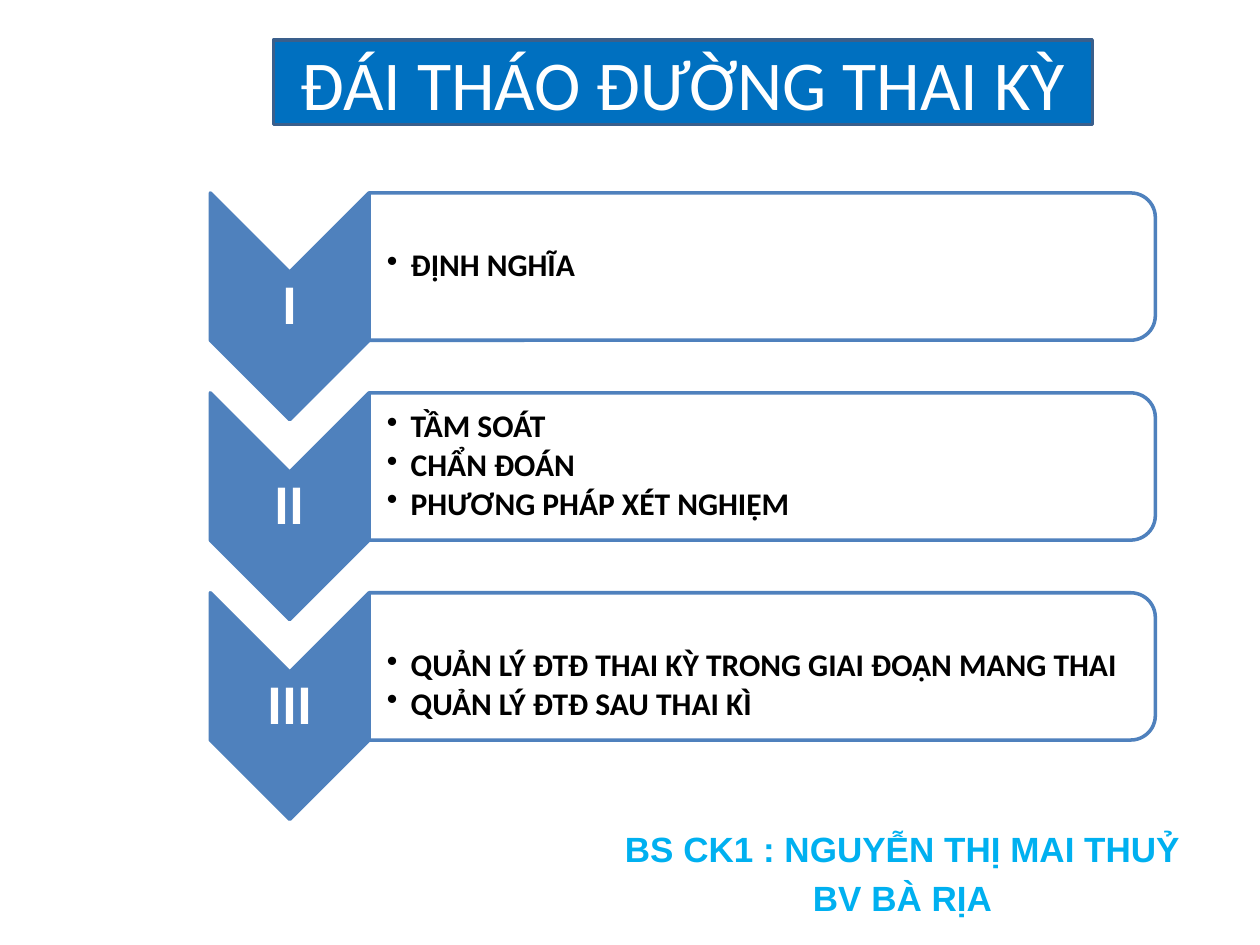
from dataclasses import dataclass

from lxml.etree import SubElement
from pptx import Presentation
from pptx.dml.color import RGBColor
from pptx.enum.shapes import MSO_SHAPE
from pptx.enum.text import MSO_ANCHOR, MSO_AUTO_SIZE, PP_ALIGN
from pptx.oxml.ns import qn
from pptx.util import Cm, Pt


@dataclass(frozen=True)
class Theme:
    body_font: str = "Calibri"
    author_font: str = "Arial"
    title_fill: RGBColor = RGBColor(0x00, 0x70, 0xC0)
    title_line: RGBColor = RGBColor(0x3A, 0x5F, 0x8C)
    accent: RGBColor = RGBColor(0x4F, 0x81, 0xBD)
    author: RGBColor = RGBColor(0x00, 0xB0, 0xF0)
    white: RGBColor = RGBColor(0xFF, 0xFF, 0xFF)
    black: RGBColor = RGBColor(0x00, 0x00, 0x00)
    title_size: int = 40
    label_size: int = 32
    bullet_size: int = 18
    author_size: int = 20
    line_width: int = 2


class SlideBuilder:
    def __init__(self, slide, theme):
        self.slide = slide
        self.theme = theme

    def place(self, sp, left, top, width, height):
        sp.left, sp.top = Cm(left), Cm(top)
        sp.width, sp.height = Cm(width), Cm(height)

    def paint(self, sp, fill, line):
        sp.fill.solid()
        sp.fill.fore_color.rgb = fill
        sp.line.color.rgb = line
        sp.line.width = Pt(self.theme.line_width)

    def font(self, p, name, size, color, bold=True):
        p.font.name, p.font.size, p.font.bold = name, Pt(size), bold
        p.font.color.rgb = color

    def title(self, text, *box):
        t = self.theme
        sp = self.slide.shapes.title
        self.place(sp, *box)
        geom = SubElement(sp._element.spPr, qn("a:prstGeom"), prst="roundRect")
        SubElement(geom, qn("a:avLst"))
        self.paint(sp, t.title_fill, t.title_line)
        tf = sp.text_frame
        tf.auto_size = MSO_AUTO_SIZE.NONE
        tf.vertical_anchor = MSO_ANCHOR.MIDDLE
        tf.text = text
        p = tf.paragraphs[0]
        p.alignment = PP_ALIGN.CENTER
        self.font(p, t.body_font, t.title_size, t.white, bold=False)

    def turned_shape(self, kind, fill, left, top, width, height):
        """Add a shape turned clockwise by 90°; the box is the one seen after turning."""
        shift = (width - height) / 2
        sp = self.slide.shapes.add_shape(
            kind, Cm(left + shift), Cm(top - shift), Cm(height), Cm(width))
        sp.rotation = 90
        sp.shadow.inherit = False
        self.paint(sp, fill, self.theme.accent)

    def text(self, lines, box, anchor=MSO_ANCHOR.MIDDLE, margins=None):
        """Add a text box with one paragraph per line and return the paragraphs."""
        tf = self.slide.shapes.add_textbox(*map(Cm, box)).text_frame
        tf.word_wrap = True
        tf.vertical_anchor = anchor
        if margins:
            (tf.margin_left, tf.margin_top,
             tf.margin_right, tf.margin_bottom) = map(Cm, margins)
        tf.text = "\n".join(lines)
        return tf.paragraphs

    def label(self, text, *box):
        t = self.theme
        p = self.text([text], box, margins=(0.05,) * 4)[0]
        p.alignment = PP_ALIGN.CENTER
        p.line_spacing, p.space_after = 0.9, Pt(11)
        self.font(p, t.body_font, t.label_size, t.white)

    def bullets(self, lines, top_margin, *box):
        t = self.theme
        for p in self.text(lines, box, margins=(0.36, top_margin, 0.03, 0.03)):
            p.line_spacing, p.space_after = 0.9, Pt(2.7)
            self.font(p, t.body_font, t.bullet_size, t.black)
            pPr = p._p.get_or_add_pPr()
            indent = Cm(0.48)
            pPr.set("marL", str(indent))
            pPr.set("indent", str(-indent))
            bullet = pPr.makeelement(qn("a:buChar"), {"char": "•"})
            pPr.find(qn("a:defRPr")).addprevious(bullet)

    def author(self, lines, *box):
        t = self.theme
        for p in self.text(lines, box, MSO_ANCHOR.TOP):
            p.alignment = PP_ALIGN.CENTER
            p.space_before = Pt(4)
            self.font(p, t.author_font, t.author_size, t.author)

    def section(self, numeral, lines, top, top_margin):
        t = self.theme
        left, chevron_w, chevron_h = 4.24, 3.2, 4.57
        panel_left, panel_w, panel_h = left + chevron_w, 15.85, 2.97
        self.turned_shape(MSO_SHAPE.CHEVRON, t.accent, left, top, chevron_w, chevron_h)
        self.label(numeral, left, top + 1.6, chevron_w, 1.37)
        self.turned_shape(MSO_SHAPE.ROUND_2_SAME_RECTANGLE, t.white,
                          panel_left, top, panel_w, panel_h)
        self.bullets(lines, top_margin, panel_left, top + 0.15, panel_w - 0.13, 2.67)


# Numeral, bullet lines, top margin of the text
SECTIONS = [
    ("I", ["ĐỊNH NGHĨA"], 0.03),
    ("II", ["TẦM SOÁT", "CHẨN ĐOÁN", "PHƯƠNG PHÁP XÉT NGHIỆM"], 0.03),
    ("III", ["QUẢN LÝ ĐTĐ THAI KỲ TRONG GIAI ĐOẠN MANG THAI",
             "QUẢN LÝ ĐTĐ SAU THAI KÌ"], 0.82),
]


def main():
    prs = Presentation()
    prs.slide_width, prs.slide_height = Cm(25.4), Cm(19.05)
    title_only = prs.slide_layouts[5]
    builder = SlideBuilder(prs.slides.add_slide(title_only), Theme())

    # Title
    builder.title("ĐÁI THÁO ĐƯỜNG THAI KỲ", 5.51, 0.81, 16.51, 1.7)

    # Chevron list
    first_top, pitch = 3.89, 4.03
    for i, (numeral, lines, top_margin) in enumerate(SECTIONS):
        builder.section(numeral, lines, first_top + i * pitch, top_margin)

    # Author
    builder.author(["BS CK1 : NGUYỄN THỊ MAI THUỶ", "BV BÀ RỊA"],
                   7.82, 16.56, 20.75, 1.75)

    prs.save("out.pptx")


if __name__ == "__main__":
    main()
